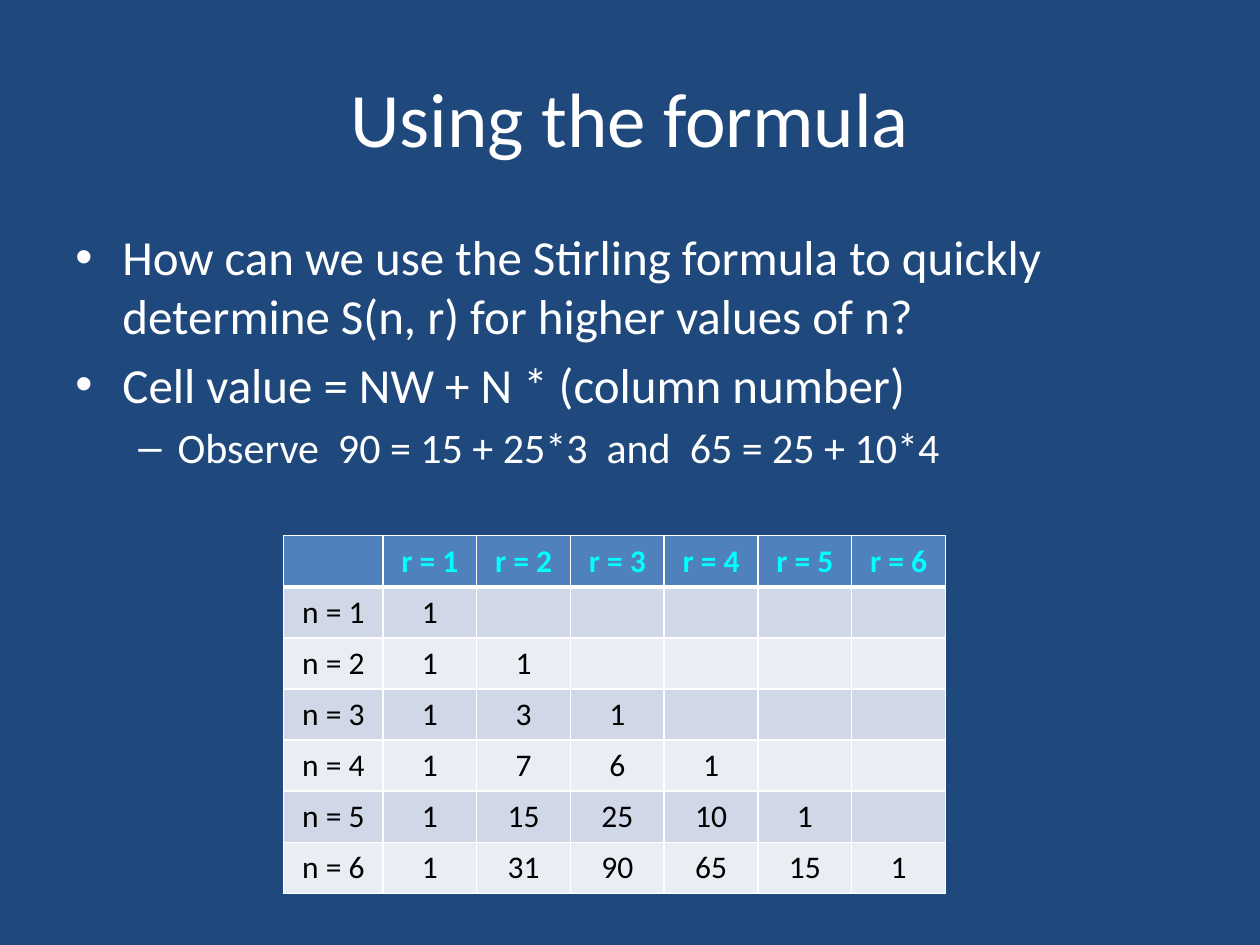
import pptx
import pptx.dml.color
import pptx.enum.text
import pptx.oxml
import pptx.oxml.ns
import pptx.util

Cm, Pt = pptx.util.Cm, pptx.util.Pt
PP_ALIGN = pptx.enum.text.PP_ALIGN
MSO_ANCHOR = pptx.enum.text.MSO_ANCHOR

NAVY, BLUE, WHITE, CYAN, BLACK = "1F497D", "4F81BD", "FFFFFF", "00FFFF", "000000"
BANDS = ["D0D8E8", "E9EDF4"]
SIZE = 6  # largest n and r in the table

BULLETS = [
    (0, "How can we use the Stirling formula to quickly determine S(n, r) "
        "for higher values of n?"),
    (0, "Cell value = NW + N * (column number)"),
    (1, "Observe  90 = 15 + 25*3  and  65 = 25 + 10*4"),
]
# level: (bullet, font size, left margin, hanging indent)
LEVELS = [("•", 28, Cm(0.95), Cm(0.95)), ("–", 24, Cm(2.06), Cm(0.79))]


def rgb(color):
    return pptx.dml.color.RGBColor.from_string(color)


def xml(markup):
    """Parse one drawing element, adding its namespace."""
    head, rest = markup.split(" ", 1)
    return pptx.oxml.parse_xml(f"{head} {pptx.oxml.ns.nsdecls('a')} {rest}")


def style(p, size, color, bold=False):
    f = p.font
    f.name, f.size, f.bold = "Calibri", Pt(size), bold
    f.color.rgb = rgb(color)


def add_text_box(s, top, height, anchor):
    tf = s.shapes.add_textbox(Cm(1.27), top, Cm(22.86), height).text_frame
    tf.word_wrap = True
    tf.vertical_anchor = anchor
    return tf


def add_title(s, text):
    p = add_text_box(s, Cm(0.76), Cm(3.18), MSO_ANCHOR.MIDDLE).paragraphs[0]
    p.text = text
    p.alignment = PP_ALIGN.CENTER
    style(p, 44, WHITE)


def add_bullets(s, items):
    tf = add_text_box(s, Cm(4.45), Cm(12.57), MSO_ANCHOR.TOP)
    for i, (level, text) in enumerate(items):
        char, size, margin, hang = LEVELS[level]
        p = tf.add_paragraph() if i else tf.paragraphs[0]
        p.text = text
        p.level = level
        p.space_before = Pt(size * 0.2)
        style(p, size, WHITE)
        pPr = p._p.get_or_add_pPr()
        pPr.set("marL", str(margin))
        pPr.set("indent", str(-hang))
        pPr.insert_element_before(xml('<a:buFont typeface="Arial"/>'), "a:defRPr")
        pPr.insert_element_before(xml(f'<a:buChar char="{char}"/>'), "a:defRPr")


def set_borders(cell, **widths):
    tcPr = cell._tc.get_or_add_tcPr()
    for side in "LRTB":
        width = Pt(widths.get(side, 1))
        tcPr.append(xml(f'<a:ln{side} w="{width}"><a:solidFill>'
                        f'<a:srgbClr val="{WHITE}"/></a:solidFill></a:ln{side}>'))


def stirling_rows(size):
    """Each value is NW + N * (column number)."""
    row = [1]
    for n in range(1, size + 1):
        yield [f"n = {n}"] + [str(v) for v in row] + [""] * (size - n)
        row = [nw + above * r for r, (nw, above)
               in enumerate(zip([0] + row, row + [0]), 1)]


def add_table(s, rows):
    count = len(rows)
    table = s.shapes.add_table(count, count, Cm(5.72), Cm(10.8),
                               Cm(13.34), Cm(7.21)).table
    for i, col in enumerate(table.columns):
        col.width = Cm(1.89 if i else 2)
    for i, values in enumerate(rows):
        table.rows[i].height = Cm(1.03)
        for j, value in enumerate(values):
            cell = table.cell(i, j)
            set_borders(cell, B=1 if i else 3, T=3 if i == 1 else 1)
            cell.fill.solid()
            cell.fill.fore_color.rgb = rgb(BANDS[(i - 1) % 2] if i else BLUE)
            p = cell.text_frame.paragraphs[0]
            p.text = value
            p.alignment = PP_ALIGN.CENTER
            style(p, 18, BLACK if i else CYAN, bold=i == 0)


def main():
    prs = pptx.Presentation()
    prs.slide_width, prs.slide_height = Cm(25.4), Cm(19.05)
    s = prs.slides.add_slide(prs.slide_layouts[6])
    s.background.fill.solid()
    s.background.fill.fore_color.rgb = rgb(NAVY)

    # Heading and explanation
    add_title(s, "Using the formula")
    add_bullets(s, BULLETS)

    # Triangle of Stirling numbers
    header = [""] + [f"r = {r}" for r in range(1, SIZE + 1)]
    add_table(s, [header, *stirling_rows(SIZE)])

    prs.save("out.pptx")


if __name__ == "__main__":
    main()
